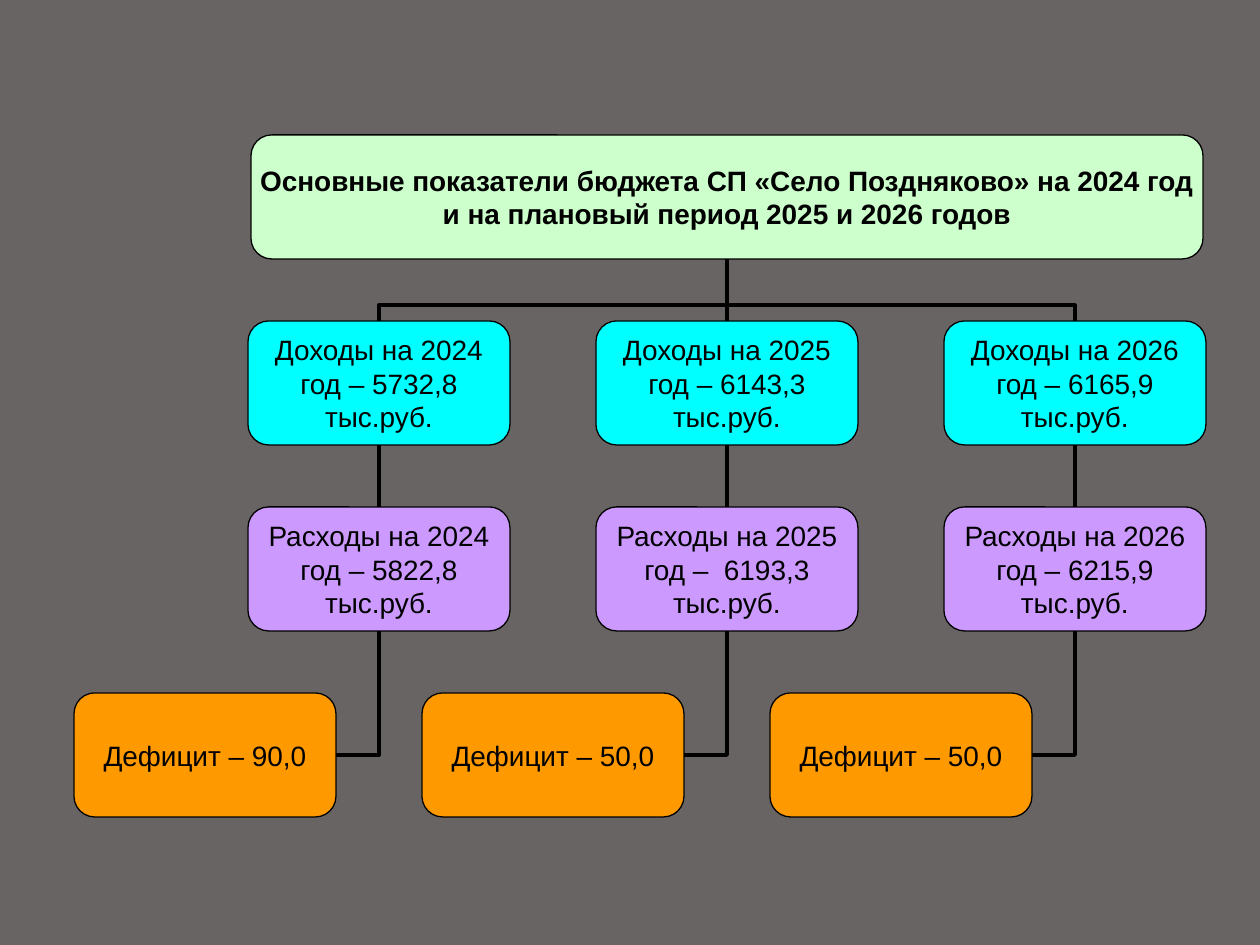
from lxml import etree
from pptx import Presentation
from pptx.dml.color import RGBColor
from pptx.enum.shapes import MSO_CONNECTOR, MSO_SHAPE
from pptx.enum.text import MSO_ANCHOR, PP_ALIGN
from pptx.oxml.ns import qn
from pptx.util import Pt

SCALE = 914400 // 126
STRAIGHT = MSO_CONNECTOR.STRAIGHT
ELBOW = MSO_CONNECTOR.ELBOW
ROUNDED = MSO_SHAPE.ROUNDED_RECTANGLE
MIDDLE = MSO_ANCHOR.MIDDLE
CENTER = PP_ALIGN.CENTER
TOP, BOTTOM = 0, 2

BOX_WIDTH, BOX_HEIGHT = 262, 124
FIRST_LEFT, COLUMN_STEP = 248, 348
FIRST_TOP, ROW_STEP = 135, 186
DEFICIT_SHIFT = 174
TITLE_LEFT, TITLE_WIDTH = 251, 952

TITLE = ("Основные показатели бюджета СП «Село Поздняково» на 2024 год "
         "и на плановый период 2025 и 2026 годов")
YEARS = [
    ("Доходы на 2024 год – 5732,8 тыс.руб.",
     "Расходы на 2024 год – 5822,8 тыс.руб.", "Дефицит – 90,0"),
    ("Доходы на 2025 год – 6143,3 тыс.руб.",
     "Расходы на 2025 год –  6193,3 тыс.руб.", "Дефицит – 50,0"),
    ("Доходы на 2026 год – 6165,9 тыс.руб.",
     "Расходы на 2026 год – 6215,9 тыс.руб.", "Дефицит – 50,0"),
]


def px(value):
    return int(value * SCALE)


def color(value):
    return RGBColor.from_string(value)


def row_top(row):
    return FIRST_TOP + row * ROW_STEP


def add_box(page, left, row, text, fill, width=BOX_WIDTH, bold=False):
    box = page.shapes.add_shape(ROUNDED, px(left), px(row_top(row)),
                                px(width), px(BOX_HEIGHT))
    box.shadow.inherit = False
    box.fill.solid()
    box.fill.fore_color.rgb = color(fill)
    box.line.color.rgb = color("000000")
    box.line.width = Pt(0.75)
    frame = box.text_frame
    frame.word_wrap = True
    frame.vertical_anchor = MIDDLE
    frame.margin_left = frame.margin_right = 0
    frame.margin_top = frame.margin_bottom = 0
    para = frame.paragraphs[0]
    para.alignment = CENTER
    span = para.add_run()
    span.text = text
    span.font.name = "Arial"
    span.font.size = Pt(16)
    span.font.bold = bold
    span.font.color.rgb = color("000000")
    return box


def add_line(page, kind, start, end):
    line = page.shapes.add_connector(kind, *map(px, start + end))
    line.line.color.rgb = color("000000")
    line.line.width = Pt(2.25)
    etree.SubElement(line._element.spPr, qn("a:effectLst"))
    return line


def join(page, upper, lower):
    line = add_line(page, STRAIGHT, (0, 0), (0, 0))
    line.begin_connect(lower, TOP)
    line.end_connect(upper, BOTTOM)


def add_corner(page, start, end):
    line = add_line(page, ELBOW, start, end)
    line._element.spPr.find(qn("a:prstGeom")).set("prst", "bentConnector2")


def add_branch(page, child, parent):
    middle_x = (child[0] + parent[0]) / 2
    middle_y = (child[1] + parent[1]) / 2
    half_rise = (child[1] - parent[1]) / 2
    half_run = abs(child[0] - parent[0]) / 2
    from_left = child[0] < parent[0]
    half_width = half_rise if from_left else -half_rise
    line = add_line(page, ELBOW,
                    (middle_x - half_width, middle_y - half_run),
                    (middle_x + half_width, middle_y + half_run))
    properties = line._element.spPr
    turn = 270 if from_left else 90
    properties.find(qn("a:xfrm")).set("rot", str(turn * 60000))
    geometry = properties.find(qn("a:prstGeom"))
    adjustments = geometry.find(qn("a:avLst"))
    etree.SubElement(adjustments, qn("a:gd"), name="adj1", fmla="val 25400")


def add_year(page, column, texts, title):
    left = FIRST_LEFT + column * COLUMN_STEP
    middle = left + BOX_WIDTH // 2
    deficit_left = left - DEFICIT_SHIFT
    income = add_box(page, left, 1, texts[0], "00FFFF")
    expense = add_box(page, left, 2, texts[1], "CC99FF")
    add_box(page, deficit_left, 3, texts[2], "FF9900")
    join(page, income, expense)
    add_corner(page, (deficit_left + BOX_WIDTH, row_top(3) + BOX_HEIGHT // 2),
               (middle, row_top(2) + BOX_HEIGHT))
    title_middle = TITLE_LEFT + TITLE_WIDTH // 2
    if middle == title_middle:
        join(page, title, income)
    else:
        add_branch(page, (middle, row_top(1)),
                   (title_middle, row_top(0) + BOX_HEIGHT))


def main():
    deck = Presentation()
    deck.slide_width, deck.slide_height = px(1260), px(945)
    page = deck.slides.add_slide(deck.slide_layouts[6])
    page.background.fill.solid()
    page.background.fill.fore_color.rgb = color("696464")
    title = add_box(page, TITLE_LEFT, 0, TITLE, "CCFFCC", TITLE_WIDTH, True)
    for column, texts in enumerate(YEARS):
        add_year(page, column, texts, title)
    deck.save("out.pptx")


if __name__ == "__main__":
    main()
